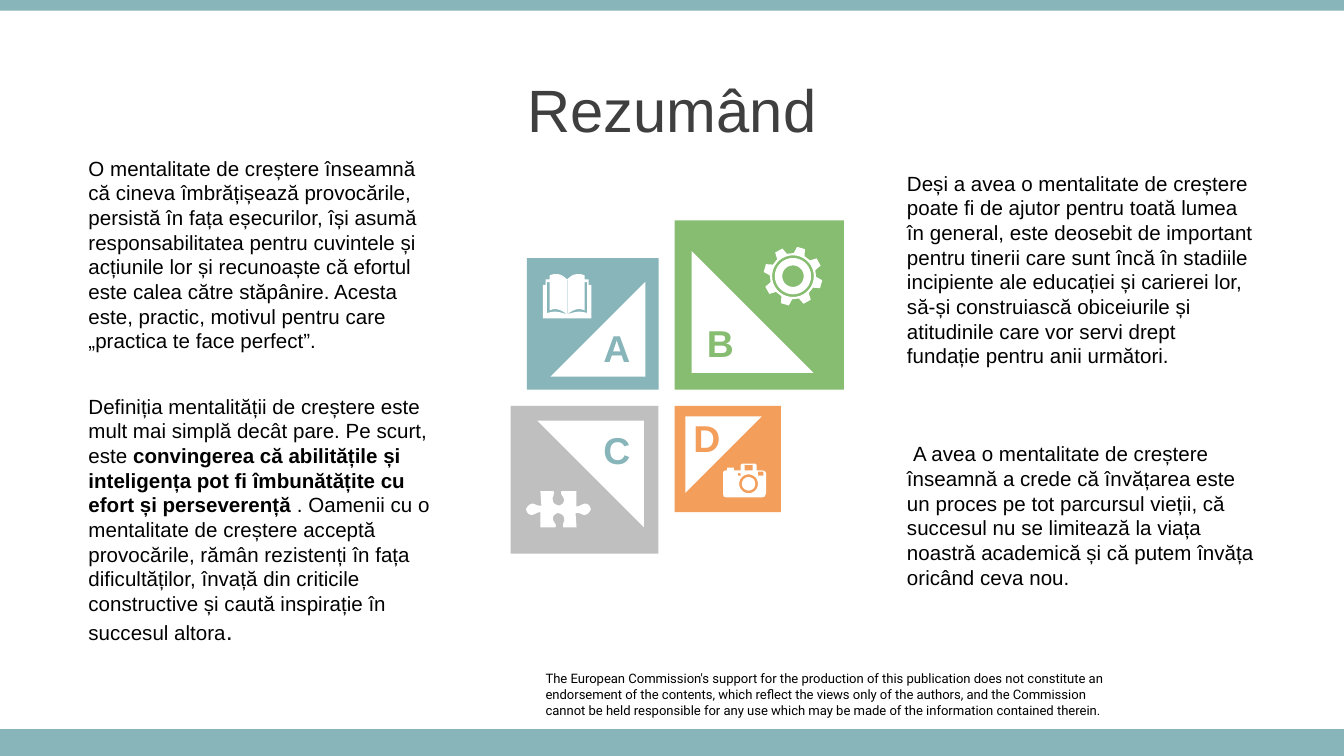
from math import cos, radians, sin

from pptx import Presentation
from pptx import util as u
from pptx.dml.color import RGBColor
from pptx.enum import shapes, text

COLUMN = u.Inches(0.1)
ICON_UNIT = COLUMN / 10
TEAL, GREEN, ORANGE, GREY = "87B5BA", "86BD70", "F39E5A", "BFBFBF"
WHITE, BLACK, DARK = "FFFFFF", "000000", "3F3F3F"


def grid(*counts):
    return [round(count * COLUMN) for count in counts]


def colour(value):
    return RGBColor.from_string(value)


def style(shape, fill):
    shape.shadow.inherit = False
    shape.fill.solid()
    shape.fill.fore_color.rgb = colour(fill)
    shape.line.fill.background()


def block(page, kind, box, fill, rotation=0):
    shape = page.shapes.add_shape(kind, *grid(*box))
    style(shape, fill)
    shape.rotation = rotation


def set_font(font, size, value, name="Arial", bold=False):
    font.name, font.size, font.bold = name, u.Pt(size), bold
    font.color.rgb = colour(value)


def text_box(page, box, inset=True):
    frame = page.shapes.add_textbox(*grid(*box)).text_frame
    frame.word_wrap = True
    if not inset:
        frame.margin_left = frame.margin_right = 0
        frame.margin_top = frame.margin_bottom = 0
    return frame


def trace(steps, pieces=6):
    points = [steps[0]]
    for step in steps[1:]:
        if len(step) == 2:
            points.append(step)
            continue
        corners = [points[-1], step[:2], step[2:4], step[4:]]
        for part in range(1, pieces + 1):
            t = part / pieces
            weights = ((1 - t) ** 3, 3 * t * (1 - t) ** 2, 3 * t * t * (1 - t), t ** 3)
            points.append(tuple(sum(w * c[axis] for w, c in zip(weights, corners))
                                for axis in (0, 1)))
    return points


def mirror(points):
    return [(-x, y) for x, y in reversed(points)]


def circle(x, y, radius):
    return [(x + radius * cos(radians(a)), y + radius * sin(radians(a)))
            for a in range(0, 360, 10)]


def rectangle(left, top, right, bottom):
    return [(left, top), (right, top), (right, bottom), (left, bottom)]


def book():
    half = trace([(-18, 16.5), (-18, -8.5), (-16, -8.5), (-16, -12.5), (-13, -12.5),
                  (-13, -15.5), (-11, -16.5, -10, -16.5, -8, -16.5),
                  (-5, -16.5, -3, -15.5, 0, -12.5)])
    slit = trace([(0, 13.5), (-5, 9.5, -9, 8.5, -13, 10.5), (-13, -10.5), (-15, -10.5),
                  (-15, 12.5), (-9, 10.5, -6, 11.5, 0, 13.5)])
    return [half + mirror(half), slit, mirror(slit), rectangle(-0.2, -12, 0.2, 13)]


def gear():
    teeth = []
    for middle in range(-74, 286, 45):
        for offset, radius in ((-14, 17.2), (-8, 22), (8, 22), (14, 17.2)):
            angle = radians(middle + offset)
            teeth.append((radius * cos(angle), radius * sin(angle)))
    return [teeth] + [circle(0, 0, radius) for radius in (15.5, 13.5, 8)]


def puzzle():
    half = trace([(19, 0), (12, 7), (9, 5, 10, 3, 8, 2), (6, 0, 4, 1, 2, 2),
                  (1, 3, 0, 6, 2, 8), (5, 10, 6, 8, 8, 11), (0, 19), (-8, 11),
                  (-10, 13, -9, 14, -11, 17), (-13, 19, -16, 18, -17, 17),
                  (-18, 15, -18, 13, -17, 11), (-15, 9, -13, 10, -11, 7), (-19, 0)])
    return [half + [(-x, -y) for x, y in half[1:]]]


def camera():
    body = [(-14, -7.5), (-13, -7.5), (-13, -9.5), (-8, -9.5), (-8, -7.5), (-3, -7.5),
            (-3, -11.5), (-2, -12.5), (8, -12.5), (9, -11.5), (9, -7.5), (13, -7.5),
            (15, -7), (16, -5.5), (16, 9.5), (15, 12), (13, 12.5), (-14, 12.5),
            (-15.5, 12), (-16, 10), (-16, -5.5), (-15.5, -7)]
    return [body, rectangle(0, -11.5, 6, -7.5), rectangle(-5, -5.5, -3, -3.5),
            rectangle(10, -6.5, 14, -3.5), circle(3, 2.5, 7), circle(3, 2.5, 5)]


def icon(page, centre, contours, rotation):
    x, y = grid(*centre)
    scaled = [[(a * ICON_UNIT, b * ICON_UNIT) for a, b in contour] for contour in contours]
    builder = page.shapes.build_freeform(*scaled[0][0], scale=1.0)
    for index, contour in enumerate(scaled):
        if index:
            builder.move_to(*contour[0])
        builder.add_line_segments(contour[1:], close=True)
    shape = builder.convert_to_shape(x, y)
    style(shape, WHITE)
    shape.rotation = rotation


def tile(page, corner, across, down, side, fill, letter, letter_at, letter_fill,
         icon_at, contours, icon_turn=0):
    def inside(distance, size):
        return [corner[axis] + sign * distance - (size if sign < 0 else 0)
                for axis, sign in enumerate((across, down))]

    def centre(distances):
        return corner[0] + across * distances[0], corner[1] + down * distances[1]

    block(page, shapes.MSO_SHAPE.RECTANGLE, (*inside(0, side), side, side), fill)
    turn = {(1, -1): 0, (1, 1): 90, (-1, 1): 180, (-1, -1): 270}[across, down]
    leg = 0.72 * side
    block(page, shapes.MSO_SHAPE.RIGHT_TRIANGLE,
          (*inside(0.1 * side, leg), leg, leg), WHITE, turn)
    x, y = centre(letter_at)
    para = text_box(page, (x - 2.2, y - 2.2, 4.4, 4.4)).paragraphs[0]
    para.text = letter
    para.alignment = text.PP_ALIGN.CENTER
    set_font(para.font, 20, letter_fill, bold=True)
    icon(page, centre(icon_at), contours, icon_turn)


def tiles(page, middle, gap):
    x, y = middle
    rows = (
        (-1, -1, 9.8, TEAL, "A", (3.1, 3.1), TEAL, (6.8, 6.95), book()),
        (1, -1, 12.6, GREEN, "B", (3.4, 3.5), GREEN, (8.8, 8.45), gear()),
        (-1, 1, 11, GREY, "C", (3.1, 3.3), TEAL, (7.45, 7.7), puzzle(), 45),
        (1, 1, 7.9, ORANGE, "D", (2.4, 2.4), ORANGE, (5.2, 5.55), camera()),
    )
    for across, down, *details in rows:
        corner = x + across * gap / 2, y + down * gap / 2
        tile(page, corner, across, down, *details)


def frame_page(page, width, height):
    for top, depth in ((0, 0.8), (height - 2, 2)):
        block(page, shapes.MSO_SHAPE.RECTANGLE, (0, top, width, depth), TEAL)
    frame = text_box(page, (40.6, 49.9, 41.7, 3.5), inset=False)
    frame.text = (
        "The European Commission's support for the production of this publication does not "
        "constitute an endorsement of the contents, which reflect the views only of the "
        "authors, and the Commission\ncannot be held responsible for any use which may be "
        "made of the information contained therein.")
    for para in frame.paragraphs:
        set_font(para.font, 7, BLACK, "Roboto")


def heading(page, box, words):
    title = page.shapes.title
    title.left, title.top, title.width, title.height = grid(*box)
    title.text_frame.text = words
    title.text_frame.vertical_anchor = text.MSO_ANCHOR.MIDDLE
    para = title.text_frame.paragraphs[0]
    para.alignment = text.PP_ALIGN.CENTER
    set_font(para.font, 32, DARK)


def passage(page, box, *spans, indent=0):
    para = text_box(page, box).paragraphs[0]
    if indent:
        para._p.get_or_add_pPr().set("indent", str(grid(indent)[0]))
    for words, size, bold, value in spans:
        span = para.add_run()
        span.text = words
        set_font(span.font, size, value, bold=bold)


def passages(page, left, right, width):
    passage(page, (left, 11.1, width, 15.8), (
        "O mentalitate de creștere înseamnă că cineva îmbrățișează provocările, persistă în "
        "fața eșecurilor, își asumă responsabilitatea pentru cuvintele și acțiunile lor și "
        "recunoaște că efortul este calea către stăpânire. Acesta este, practic, motivul "
        "pentru care „practica te face perfect”.", 11, False, BLACK))
    passage(page, (left, 28.8, width, 19.9), (
        "Definiția mentalității de creștere este mult mai simplă decât pare. Pe scurt, este ",
        11, False, BLACK), (
        "convingerea că abilitățile și inteligența pot fi îmbunătățite cu efort și "
        "perseverență ", 11, True, BLACK), (
        ". Oamenii cu o mentalitate de creștere acceptă provocările, rămân rezistenți în fața "
        "dificultăților, învață din criticile constructive și caută inspirație în succesul "
        "altora", 11, False, BLACK), (".", 13.5, False, "111111"))
    passage(page, (right, 12.2, width, 15.8), (
        "Deși a avea o mentalitate de creștere poate fi de ajutor pentru toată lumea în "
        "general, este deosebit de important pentru tinerii care sunt încă în stadiile "
        "incipiente ale educației și carierei lor, să-și construiască obiceiurile și "
        "atitudinile care vor servi drept fundație pentru anii următori.", 11, False, BLACK))
    passage(page, (right, 32.35, width, 12.5), (
        "A avea o mentalitate de creștere înseamnă a crede că învățarea este un proces pe tot "
        "parcursul vieții, că succesul nu se limitează la viața noastră academică și că putem "
        "învăța oricând ceva nou.", 11, False, BLACK), indent=0.46)


def main():
    deck = Presentation()
    width, height = 100, 56.25
    deck.slide_width, deck.slide_height = grid(width, height)
    page = deck.slides.add_slide(deck.slide_layouts[5])
    frame_page(page, width, height)
    heading(page, (0, 4.9, width, 6.3), "Rezumând")
    tiles(page, (49.6, 29.6), 1.2)
    passages(page, 5.6, 66.5, 27.8)
    deck.save("out.pptx")


if __name__ == "__main__":
    main()
